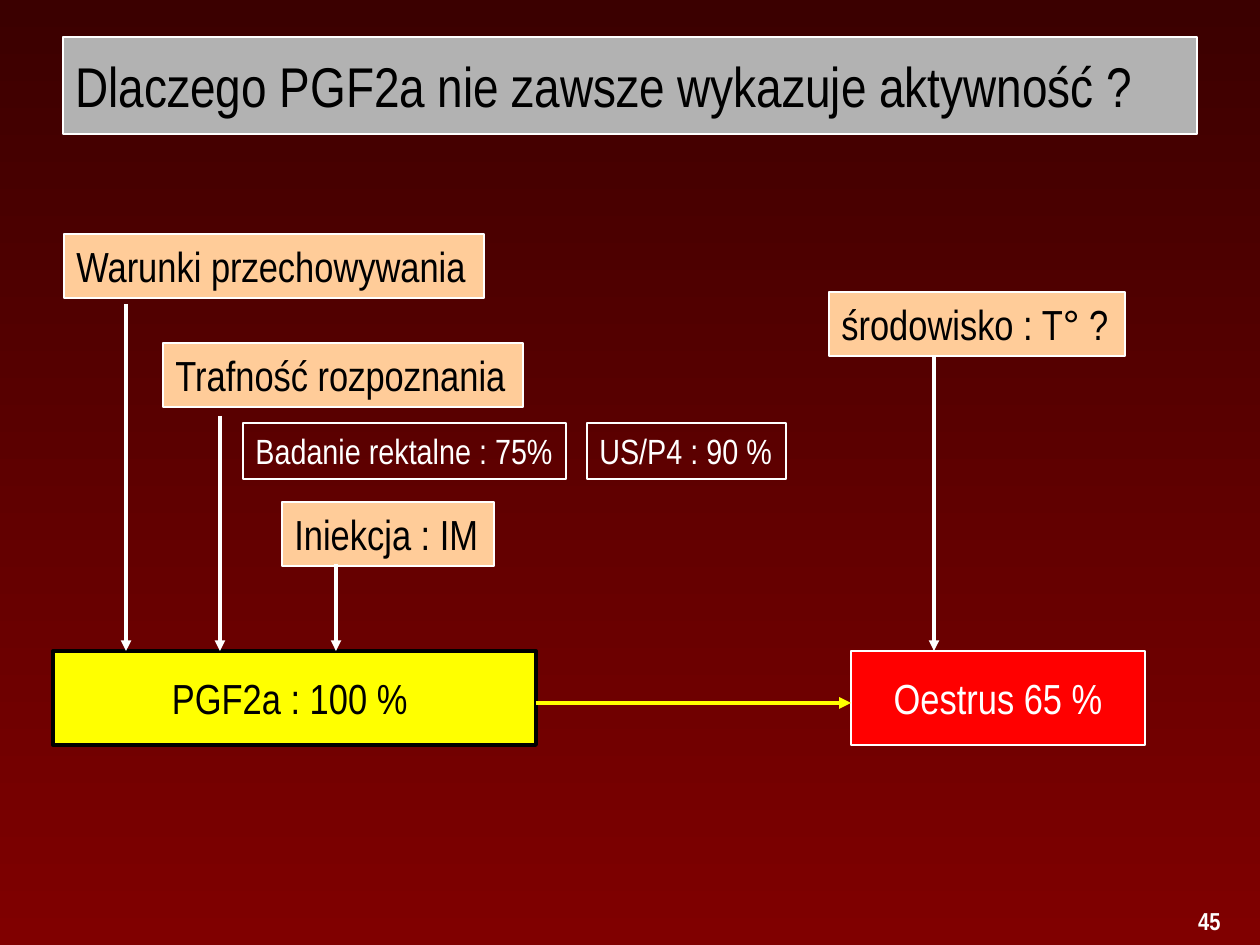
import pptx
import pptx.dml.color
import pptx.enum.shapes
import pptx.enum.text
import pptx.oxml
import pptx.oxml.ns
import pptx.util

PX = 914400 / 126
FONT = "Arial Narrow"
BLACK, WHITE, YELLOW, RED = "000000", "FFFFFF", "FFFF00", "FF0000"
GREY, PEACH = "B2B2B2", "FFCC99"
DARK_MAROON, MAROON = "3B0000", "800000"
ALIGN = pptx.enum.text.PP_ALIGN
ANCHOR = pptx.enum.text.MSO_ANCHOR
AUTOSIZE = pptx.enum.text.MSO_AUTO_SIZE


def emu(*lengths):
    return [pptx.util.Emu(round(length * PX)) for length in lengths]


def rgb(value):
    return pptx.dml.color.RGBColor.from_string(value)


def paint(shape, fill, outline, weight=0.75):
    if fill:
        shape.fill.solid()
        shape.fill.fore_color.rgb = rgb(fill)
    else:
        shape.fill.background()
    shape.line.color.rgb = rgb(outline)
    shape.line.width = pptx.util.Pt(weight)


def write(shape, text, size, color, align=ALIGN.LEFT, bold=False):
    paragraph = shape.text_frame.paragraphs[0]
    paragraph.text = text
    paragraph.alignment = align
    font = paragraph.font
    font.name, font.size, font.bold = FONT, pptx.util.Pt(size), bold
    font.color.rgb = rgb(color)


def add_box(slide, box, text, size, color, fill=None, outline=WHITE, weight=0.75):
    shape = slide.shapes.add_shape(pptx.enum.shapes.MSO_SHAPE.RECTANGLE, *emu(*box))
    shape.shadow.inherit = False
    paint(shape, fill, outline, weight)
    shape.text_frame.word_wrap = False
    write(shape, text, size, color)
    return shape


def add_label(slide, box, text, size=24, color=BLACK, fill=PEACH):
    label = add_box(slide, box, text, size, color, fill)
    label.text_frame.vertical_anchor = ANCHOR.TOP
    label.text_frame.auto_size = AUTOSIZE.SHAPE_TO_FIT_TEXT


def add_stage(slide, box, text, color, fill, outline, weight):
    stage = add_box(slide, box, text, 24, color, fill, outline, weight)
    stage.text_frame.vertical_anchor = ANCHOR.MIDDLE
    stage.text_frame.paragraphs[0].alignment = ALIGN.CENTER


def add_arrow(slide, start, end, color=WHITE, weight=2):
    arrow = slide.shapes.add_connector(
        pptx.enum.shapes.MSO_CONNECTOR.STRAIGHT, *emu(*start, *end))
    arrow.line.color.rgb = rgb(color)
    arrow.line.width = pptx.util.Pt(weight)
    properties = arrow._element.spPr
    head = pptx.oxml.parse_xml(
        f'<a:tailEnd {pptx.oxml.ns.nsdecls("a")} type="triangle"/>')
    properties.find(pptx.oxml.ns.qn("a:ln")).append(head)
    properties.append(pptx.oxml.parse_xml(
        f'<a:effectLst {pptx.oxml.ns.nsdecls("a")}/>'))


def set_background(slide):
    fill = slide.background.fill
    fill.gradient()
    fill.gradient_angle = 270
    for stop, color in zip(fill.gradient_stops, (DARK_MAROON, MAROON)):
        stop.color.rgb = rgb(color)


def set_title(slide, box):
    title = slide.shapes.title
    title.left, title.top, title.width, title.height = emu(*box)
    paint(title, GREY, WHITE)
    title.text_frame.vertical_anchor = ANCHOR.MIDDLE
    title.text_frame.auto_size = AUTOSIZE.NONE
    write(title, "Dlaczego PGF2a nie zawsze wykazuje aktywność ?", 32, BLACK)


def add_page_number(slide, box):
    number = slide.shapes.add_textbox(*emu(*box))
    number.text_frame.word_wrap = True
    write(number, "45", 14, WHITE, ALIGN.RIGHT, bold=True)


def add_stages(slide, left, top):
    """Draw the treatment, its outcome and the arrow between them."""
    height, treatment_width, outcome_offset = 94, 483, 798
    add_stage(slide, (left, top, treatment_width, height),
              "PGF2a : 100 % ", BLACK, YELLOW, BLACK, 2.25)
    add_stage(slide, (left + outcome_offset, top, 294, height),
              "Oestrus 65 %", WHITE, RED, WHITE, 0.75)
    arrow_y = top + 52
    add_arrow(slide, (left + treatment_width, arrow_y),
              (left + outcome_offset, arrow_y), YELLOW, 2.25)


def add_factors(slide, left, top, stage_top):
    """Draw each factor with its arrow down to the stage it affects."""
    factors = [  # text, x, y, width, arrow x, arrow y
        ("Iniekcja : IM", 218, 268, 212, 272, 330),
        ("Warunki przechowywania", 0, 0, 420, 62, 70),
        ("Trafność rozpoznania", 99, 109, 360, 156, 182),
        ("środowisko : T° ?", 765, 58, 296, 870, 122),
    ]
    for text, x, y, width, arrow_x, arrow_y in factors:
        add_label(slide, (left + x, top + y, width, 64), text)
        add_arrow(slide, (left + arrow_x, top + arrow_y),
                  (left + arrow_x, stage_top))


def add_accuracies(slide, left, top):
    for text, x, width in (("Badanie rektalne : 75%", 0, 323),
                           ("US/P4 : 90 %", 344, 199)):
        add_label(slide, (left + x, top, width, 56), text, 20, WHITE, None)


def main():
    deck = pptx.Presentation()
    deck.slide_width, deck.slide_height = emu(1260, 945)
    slide = deck.slides.add_slide(deck.slide_layouts.get_by_name("Title Only"))
    stage_top = 651
    set_background(slide)
    set_title(slide, (63, 37, 1134, 97))
    add_page_number(slide, (1079, 900, 154, 45))
    add_stages(slide, 53, stage_top)
    add_factors(slide, 64, 234, stage_top)
    add_accuracies(slide, 243, 423)
    deck.save("out.pptx")


if __name__ == "__main__":
    main()
